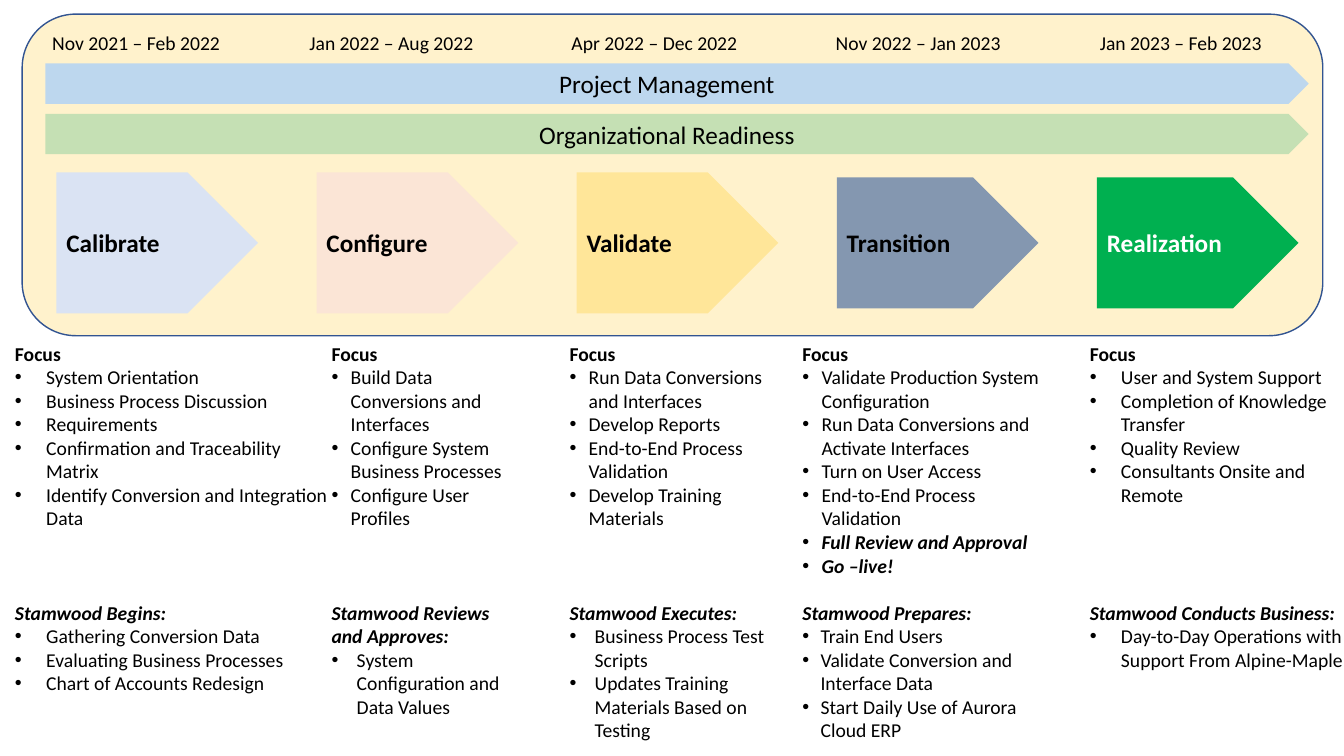
from lxml.etree import SubElement
from pptx import Presentation
from pptx.dml.color import RGBColor
from pptx.enum.shapes import MSO_SHAPE
from pptx.enum.text import MSO_ANCHOR, PP_ALIGN
from pptx.oxml.ns import qn
from pptx.util import Inches, Pt

BLACK = RGBColor(0x00, 0x00, 0x00)
WHITE = RGBColor(0xFF, 0xFF, 0xFF)
CREAM = RGBColor(0xFF, 0xF2, 0xCC)
NAVY = RGBColor(0x32, 0x54, 0x91)
SKY = RGBColor(0xBD, 0xD7, 0xEE)
SAGE = RGBColor(0xC5, 0xE0, 0xB4)
ICE = RGBColor(0xDA, 0xE3, 0xF3)
PEACH = RGBColor(0xFB, 0xE5, 0xD6)
YELLOW = RGBColor(0xFF, 0xE6, 0x99)
SLATE = RGBColor(0x84, 0x97, 0xB0)
GREEN = RGBColor(0x00, 0xB0, 0x50)

STREAMS = [("Project Management", SKY), ("Organizational Readiness", SAGE)]

PHASES = [
    ("Calibrate", ICE, BLACK, 1.4, "Nov 2021 – Feb 2022", 0.42),
    ("Configure", PEACH, BLACK, 1.4, "Jan 2022 – Aug 2022", 2.97),
    ("Validate", YELLOW, BLACK, 1.4, "Apr 2022 – Dec 2022", 5.57),
    ("Transition", SLATE, BLACK, 1.3, "Nov 2022 – Jan 2023", 8.19),
    ("Realization", GREEN, WHITE, 1.3, "Jan 2023 – Feb 2023", 10.81),
]

DETAILS = [
    dict(left=0.05, width=3.39, focus_indent=0.31, task_indent=0.31, gap_lines=3,
         focus=["System Orientation", "Business Process Discussion", "Requirements",
                "Confirmation and Traceability Matrix",
                "Identify Conversion and Integration Data"],
         milestones=[], heading="Stamwood Begins:",
         tasks=["Gathering Conversion Data", "Evaluating Business Processes",
                "Chart of Accounts Redesign"]),
    dict(left=3.19, width=1.96, focus_indent=0.19, task_indent=0.25, gap_lines=3,
         focus=["Build Data Conversions and Interfaces",
                "Configure System Business Processes", "Configure User Profiles"],
         milestones=[], heading="Stamwood Reviews and Approves:",
         tasks=["System Configuration and Data Values"]),
    dict(left=5.55, width=2.41, focus_indent=0.19, task_indent=0.25, gap_lines=3,
         focus=["Run Data Conversions and Interfaces", "Develop Reports",
                "End-to-End Process Validation", "Develop Training Materials"],
         milestones=[], heading="Stamwood Executes:",
         tasks=["Business Process Test Scripts",
                "Updates Training Materials Based on Testing"]),
    dict(left=7.86, width=2.72, focus_indent=0.19, task_indent=0.18, gap_lines=1,
         focus=["Validate Production System Configuration",
                "Run Data Conversions and Activate Interfaces",
                "Turn on User Access", "End-to-End Process Validation"],
         milestones=["Full Review and Approval", "Go –live!"],
         heading="Stamwood Prepares:",
         tasks=["Train End Users", "Validate Conversion and Interface Data",
                "Start Daily Use of Aurora Cloud ERP"]),
    dict(left=10.71, width=2.71, focus_indent=0.31, task_indent=0.31, gap_lines=4,
         focus=["User and System Support", "Completion of Knowledge Transfer",
                "Quality Review", "Consultants Onsite and Remote"],
         milestones=[], heading="Stamwood Conducts Business:",
         tasks=["Day-to-Day Operations with Support From Alpine-Maple"]),
]


class RoadmapSlide:
    """Draws roadmap elements on one slide in a shared style."""

    font_name = "Calibri"
    body_size = 14
    label_size = 18
    line_height = 16.8

    def __init__(self, slide):
        self.slide = slide

    def style(self, paragraph, size, color=BLACK, bold=False, italic=False):
        font = paragraph.font
        font.name, font.size = self.font_name, Pt(size)
        font.bold, font.italic = bold, italic
        font.color.rgb = color

    def block(self, kind, left, top, width, height, fill, outline=None):
        block = self.slide.shapes.add_shape(
            kind, Inches(left), Inches(top), Inches(width), Inches(height))
        block.shadow.inherit = False
        block.fill.solid()
        block.fill.fore_color.rgb = fill
        if outline is None:
            block.line.fill.background()
        else:
            block.line.color.rgb = outline
            block.line.width = Pt(1)
        return block

    def arrow(self, label, left, top, width, height, fill, color=BLACK,
              bold=False, align=PP_ALIGN.LEFT, right_inset=0.1):
        arrow = self.block(MSO_SHAPE.PENTAGON, left, top, width, height, fill)
        frame = arrow.text_frame
        frame.vertical_anchor = MSO_ANCHOR.MIDDLE
        frame.margin_right = Inches(right_inset)
        caption = frame.paragraphs[0]
        caption.text, caption.alignment = label, align
        self.style(caption, self.label_size, color, bold)

    def text_box(self, left, top, width, height):
        box = self.slide.shapes.add_textbox(
            Inches(left), Inches(top), Inches(width), Inches(height))
        box.text_frame.word_wrap = True
        return box.text_frame

    def date(self, span, left):
        period = self.text_box(left, 0.26, 2, 0.34).paragraphs[0]
        period.text = span
        self.style(period, self.body_size)

    def bullets(self, frame, items, indent, strong=False):
        for item in items:
            entry = frame.add_paragraph()
            entry.text = item
            properties = entry._p.get_or_add_pPr()
            properties.set("marL", str(Inches(indent)))
            properties.set("indent", str(-Inches(indent)))
            SubElement(properties, qn("a:buFont"), typeface="Arial")
            SubElement(properties, qn("a:buChar"), char="•")
            self.style(entry, self.body_size, bold=strong, italic=strong)

    def detail(self, left, width, focus, milestones, heading, tasks,
               focus_indent, task_indent, gap_lines):
        frame = self.text_box(left, 3.34, width, 3.88)
        title = frame.paragraphs[0]
        title.text = "Focus"
        self.style(title, self.body_size, bold=True)
        self.bullets(frame, focus, focus_indent)
        self.bullets(frame, milestones, focus_indent, strong=True)
        subtitle = frame.add_paragraph()
        subtitle.text = heading
        subtitle.space_before = Pt(gap_lines * self.line_height)
        self.style(subtitle, self.body_size, bold=True, italic=True)
        self.bullets(frame, tasks, task_indent)


def main():
    presentation = Presentation()
    presentation.slide_width = Inches(13.33)
    presentation.slide_height = Inches(7.5)
    roadmap = RoadmapSlide(
        presentation.slides.add_slide(presentation.slide_layouts[6]))

    for detail in DETAILS:
        roadmap.detail(**detail)

    roadmap.block(MSO_SHAPE.ROUNDED_RECTANGLE, 0.22, 0.14, 12.9, 3.19, CREAM, NAVY)
    for row, (stream, fill) in enumerate(STREAMS):
        roadmap.arrow(stream, 0.45, 0.63 + 0.5 * row, 12.53, 0.4, fill,
                      align=PP_ALIGN.CENTER, right_inset=0.2)
    for column, (phase, fill, color, height, span, date_left) in enumerate(PHASES):
        roadmap.arrow(phase, 0.56 + 2.58 * column, 2.41 - height / 2, 2, height,
                      fill, color, bold=True)
        roadmap.date(span, date_left)

    presentation.save("out.pptx")


if __name__ == "__main__":
    main()
